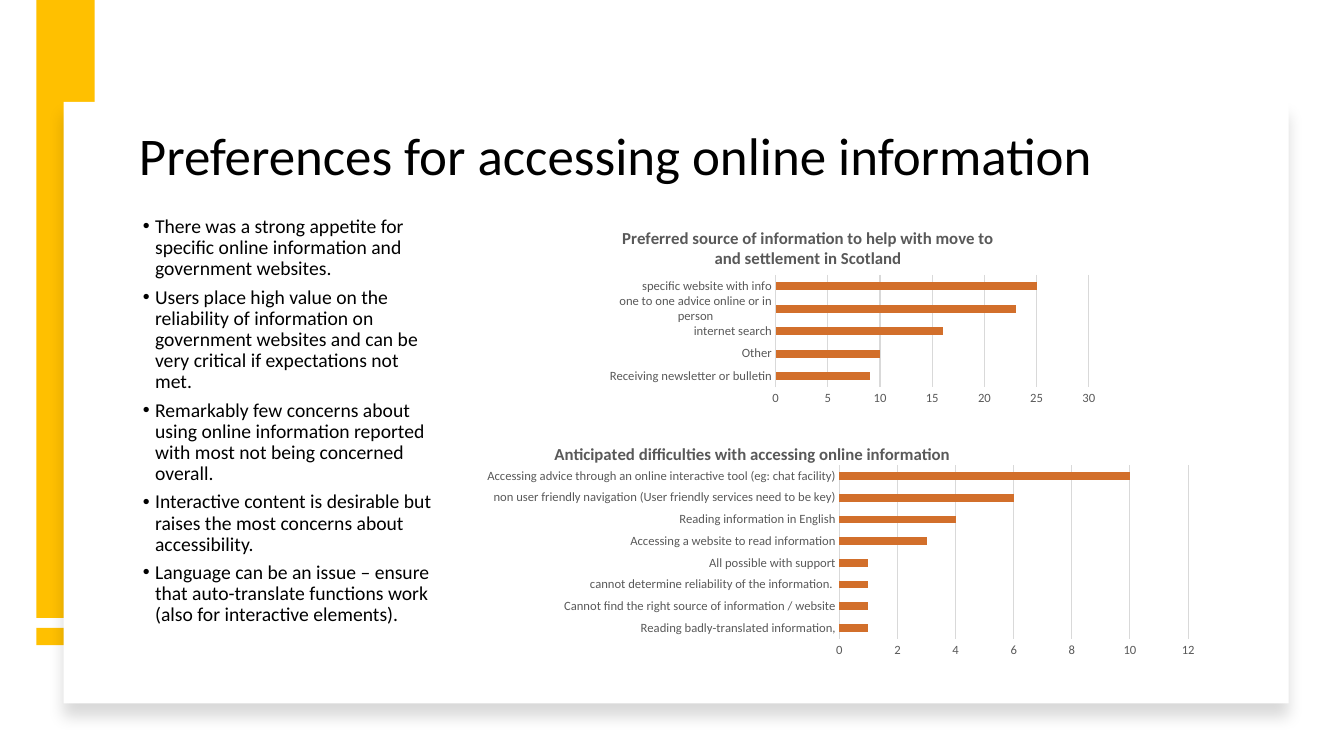
from dataclasses import dataclass

from lxml import etree
from pptx import Presentation, util as u
from pptx.chart.data import CategoryChartData
from pptx.dml.color import RGBColor
from pptx.enum import chart as charts, shapes, text
from pptx.oxml import parse_xml
from pptx.oxml.ns import nsdecls, qn

PX = 9144  # EMU, 100 px to the inch


@dataclass(frozen=True)
class Theme:
    font: str = "Calibri"
    accent: str = "FFC000"
    panel: str = "FFFFFF"
    ink: str = "000000"
    bar: str = "D26F2B"
    label: str = "595959"
    grid: str = "D9D9D9"
    title_size: float = 37.8
    body_size: float = 14
    chart_title_size: float = 12
    axis_size: float = 9


class SlideBuilder:
    def __init__(self, slide, theme):
        self.slide = slide
        self.theme = theme

    def style(self, font, size, color, bold=False):
        font.name = self.theme.font
        font.size = u.Pt(size)
        font.bold = bold
        font.color.rgb = RGBColor.from_string(color)

    def rectangle(self, box, color):
        shape = self.slide.shapes.add_shape(
            shapes.MSO_SHAPE.RECTANGLE, *(n * PX for n in box))
        shape.shadow.inherit = False
        shape.fill.solid()
        shape.fill.fore_color.rgb = RGBColor.from_string(color)
        shape.line.fill.background()
        return shape

    def panel(self, box):
        """Draw the white card with a soft shadow below it."""
        shape = self.rectangle(box, self.theme.panel)
        effects = shape._element.spPr.find(qn("a:effectLst"))
        effects.append(parse_xml(
            f'<a:outerShdw {nsdecls("a")} blurRad="{u.Pt(11)}" dist="{u.Pt(10)}" '
            f'dir="5400000" algn="t" rotWithShape="0"><a:srgbClr val="{self.theme.ink}">'
            '<a:alpha val="15000"/></a:srgbClr></a:outerShdw>'))

    def text_box(self, box, lines, size, anchor=text.MSO_ANCHOR.TOP, bullets=False):
        frame = self.slide.shapes.add_textbox(*(n * PX for n in box)).text_frame
        frame.word_wrap = True
        frame.vertical_anchor = anchor
        for index, line in enumerate(lines):
            paragraph = frame.add_paragraph() if index else frame.paragraphs[0]
            paragraph.line_spacing = 0.9
            run = paragraph.add_run()
            run.text = line
            self.style(run.font, size, self.theme.ink)
            if bullets:
                paragraph.space_before = u.Pt(5)
                self.bullet(paragraph)

    def bullet(self, paragraph):
        properties = paragraph._p.get_or_add_pPr()
        properties.set("marL", str(12 * PX))
        properties.set("indent", str(-12 * PX))
        etree.SubElement(properties, qn("a:buFont"), typeface="Arial")
        etree.SubElement(properties, qn("a:buChar"), char="•")

    def bar_chart(self, box, title, title_at, plot_area, rows):
        data = CategoryChartData()
        data.categories = [name for name, value in rows]
        data.add_series("Series 1", [value for name, value in rows])
        chart = self.slide.shapes.add_chart(
            charts.XL_CHART_TYPE.BAR_CLUSTERED, *(n * PX for n in box), data).chart
        chart.has_legend = False
        self.style(chart.font, self.theme.axis_size, self.theme.label)

        chart.has_title = True
        run = chart.chart_title.text_frame.paragraphs[0].add_run()
        run.text = title
        self.style(run.font, self.theme.chart_title_size, self.theme.label, bold=True)
        chart.chart_title.include_in_layout = False
        self.place(chart.chart_title._element, title_at)
        self.place(chart._chartSpace.chart.plotArea, plot_area)

        plot = chart.plots[0]
        plot.vary_by_categories = False
        plot.gap_width = 182
        fill = plot.series[0].format.fill
        fill.solid()
        fill.fore_color.rgb = RGBColor.from_string(self.theme.bar)

        for axis in (chart.category_axis, chart.value_axis):
            axis.major_tick_mark = axis.minor_tick_mark = charts.XL_TICK_MARK.NONE
            self.style(axis.tick_labels.font, self.theme.axis_size, self.theme.label)
        chart.value_axis.has_major_gridlines = True
        chart.value_axis.format.line.fill.background()
        for line in (chart.category_axis.format.line,
                     chart.value_axis.major_gridlines.format.line):
            line.color.rgb = RGBColor.from_string(self.theme.grid)
            line.width = u.Pt(0.75)

    def place(self, element, fractions):
        """Fix a chart part at x, y and, if given, inner w, h of the chart."""
        for old in element.findall(qn("c:layout")):
            element.remove(old)
        layout = parse_xml(f'<c:layout {nsdecls("c")}><c:manualLayout/></c:layout>')
        manual = layout[0]
        if len(fractions) == 4:
            etree.SubElement(manual, qn("c:layoutTarget"), val="inner")
        for key in ("xMode", "yMode"):
            etree.SubElement(manual, qn(f"c:{key}"), val="edge")
        for key, value in zip("xywh", fractions):
            etree.SubElement(manual, qn(f"c:{key}"), val=str(value))
        title_text = element.find(qn("c:tx"))
        element.insert(0 if title_text is None else 1, layout)


FINDINGS = [
    "There was a strong appetite for specific online information and government websites.",
    "Users place high value on the reliability of information on government websites "
    "and can be very critical if expectations not met.",
    "Remarkably few concerns about using online information reported with most not "
    "being concerned overall.",
    "Interactive content is desirable but raises the most concerns about accessibility.",
    "Language can be an issue – ensure that auto-translate functions work "
    "(also for interactive elements).",
]
SOURCES = [
    ("Receiving newsletter or bulletin", 9),
    ("Other", 10),
    ("internet search", 16),
    ("one to one advice online or in person", 23),
    ("specific website with info", 25),
]
DIFFICULTIES = [
    ("Reading badly-translated information,", 1),
    ("Cannot find the right source of information / website", 1),
    (" cannot determine reliability of the information. ", 1),
    ("All possible with support", 1),
    ("Accessing a website to read information", 3),
    ("Reading information in English", 4),
    ("non user friendly navigation (User friendly services need to be key)", 6),
    ("Accessing advice through an online interactive tool (eg: chat facility)", 10),
]


def main():
    presentation = Presentation()
    presentation.slide_width = 1333 * PX
    presentation.slide_height = 750 * PX
    theme = Theme()
    builder = SlideBuilder(
        presentation.slides.add_slide(presentation.slide_layouts[6]), theme)

    builder.rectangle((36, 623, 58, 17), theme.accent)
    builder.rectangle((36, 0, 58, 613), theme.accent)
    builder.panel((63, 101, 1215, 597))
    builder.text_box((128, 122, 1077, 68), ["Preferences for accessing online information"],
                     theme.title_size, anchor=text.MSO_ANCHOR.BOTTOM)
    builder.text_box((132, 210, 306, 439), FINDINGS, theme.body_size, bullets=True)
    builder.bar_chart(
        (594, 210, 501, 196),
        "Preferred source of information to help with move to and settlement in Scotland",
        (0.04, 0.06), (0.35, 0.32, 0.62, 0.57), SOURCES)
    builder.bar_chart(
        (449, 427, 752, 230),
        "Anticipated difficulties with accessing online information",
        (0.13, 0.04), (0.51, 0.15, 0.46, 0.75), DIFFICULTIES)
    presentation.save("out.pptx")


if __name__ == "__main__":
    main()
